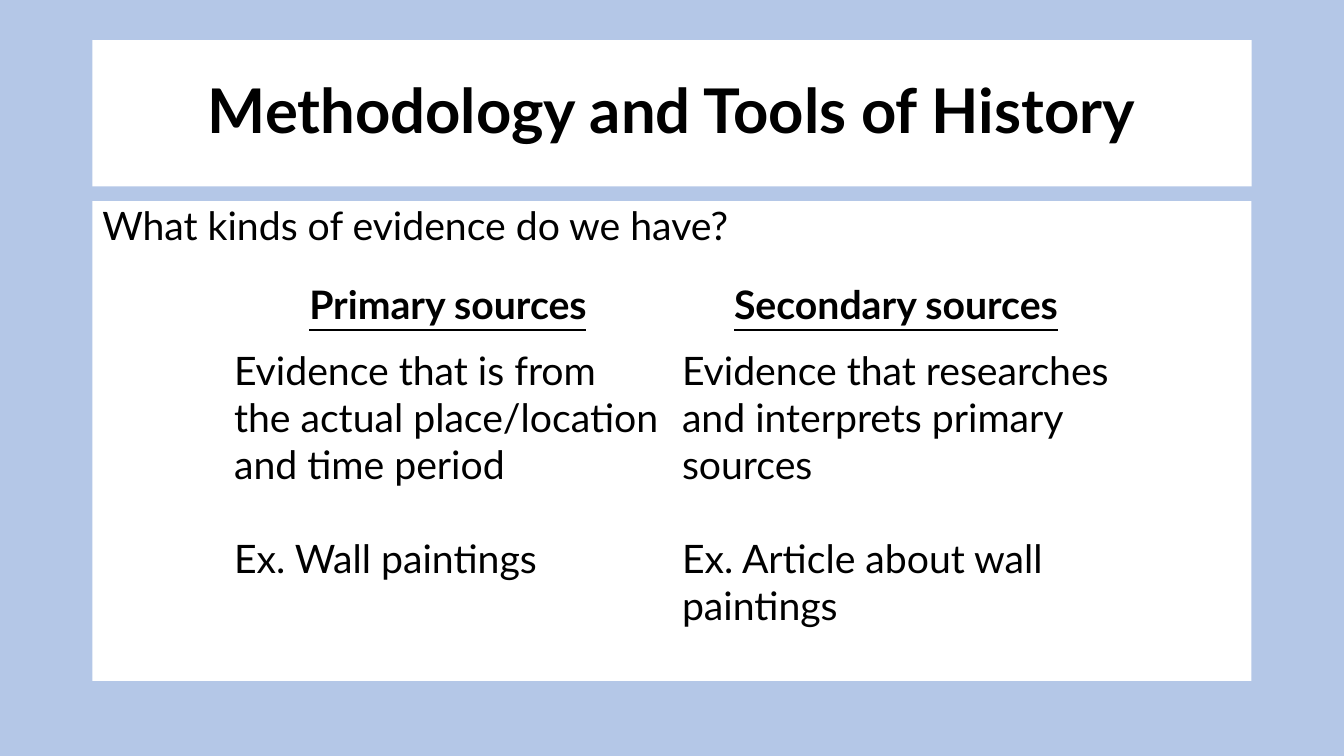
"""Build the slide on the methodology and tools of history."""
import pptx
import pptx.util
import pptx.dml.color
import pptx.enum.text

Pt = pptx.util.Pt
RGB = pptx.dml.color.RGBColor
ALIGN = pptx.enum.text.PP_ALIGN
ANCHOR = pptx.enum.text.MSO_ANCHOR
BLUE = RGB(0xB4, 0xC7, 0xE7)
WHITE = RGB(0xFF, 0xFF, 0xFF)
BLACK = RGB(0, 0, 0)

PLAIN = {"name": "Lato", "size": Pt(28), "bold": False, "underline": False}
TITLE = {**PLAIN, "size": Pt(44), "bold": True}
HEAD = {**PLAIN, "bold": True, "underline": True}


def write(para, text, style, **form):
    run = para.add_run()
    run.text = text
    run.font.color.rgb = BLACK
    for key, value in style.items():
        setattr(run.font, key, value)
    for key, value in form.items():
        setattr(para, key, value)


deck = pptx.Presentation()
deck.slide_width, deck.slide_height = Pt(960), Pt(540)
slide = deck.slides.add_slide(deck.slide_layouts[5])
slide.background.fill.solid()
slide.background.fill.fore_color.rgb = BLUE

title = slide.shapes.title
body = slide.shapes.add_textbox(Pt(66), Pt(143.75), Pt(828), Pt(342.7))
panels = [
    (title, 28.75, 104.4, ANCHOR.MIDDLE, "Methodology and Tools of History",
     TITLE, {"alignment": ALIGN.CENTER}),
    (body, 143.75, 342.7, ANCHOR.TOP, "What kinds of evidence do we have?",
     PLAIN, {"alignment": ALIGN.LEFT, "space_before": Pt(10)}),
]
for box, top, high, anchor, text, style, form in panels:
    box.left, box.top, box.width, box.height = Pt(66), Pt(top), Pt(828), Pt(high)
    box.fill.solid()
    box.fill.fore_color.rgb = WHITE
    frame = box.text_frame
    frame.word_wrap = True
    frame.auto_size = pptx.enum.text.MSO_AUTO_SIZE.NONE
    frame.vertical_anchor = anchor
    write(frame.paragraphs[0], text, style, line_spacing=0.9, **form)

table = slide.shapes.add_table(2, 2, Pt(160), Pt(197.3), Pt(640), Pt(285.1)).table
table.first_row = table.horz_banding = False
table.rows[0].height, table.rows[1].height = Pt(46.8), Pt(238.3)
sources = [
    ("Primary sources",
     "Evidence that is from the actual place/location and time period",
     "Ex. Wall paintings"),
    ("Secondary sources",
     "Evidence that researches and interprets primary sources",
     "Ex. Article about wall paintings"),
]
for col, (head, fact, sample) in enumerate(sources):
    top, low = table.cell(0, col), table.cell(1, col)
    for cell in (top, low):
        cell.fill.background()
    write(top.text_frame.paragraphs[0], head, HEAD, alignment=ALIGN.CENTER)
    write(low.text_frame.paragraphs[0], fact, PLAIN)
    write(low.text_frame.add_paragraph(), sample, PLAIN, space_before=Pt(33.6))

deck.save("out.pptx")
